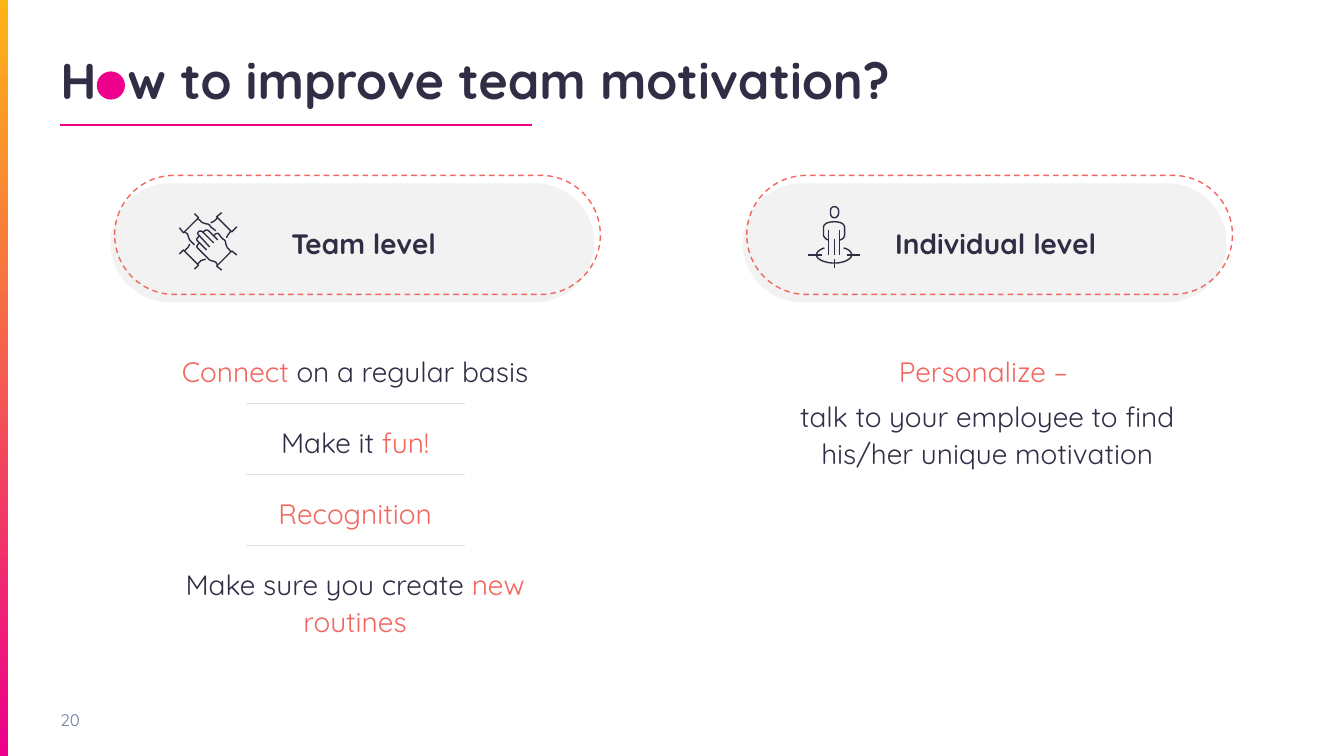
from lxml.etree import SubElement
from pptx import Presentation
from pptx.dml.color import RGBColor
from pptx.enum.dml import MSO_LINE
from pptx.enum.shapes import MSO_CONNECTOR, MSO_SHAPE
from pptx.enum.text import MSO_ANCHOR, PP_ALIGN
from pptx.oxml.ns import qn
from pptx.util import Cm, Pt

COLORS = {
    "ink": "302E45", "coral": "F2665F", "pink": "EC008C", "amber": "FDB515",
    "pill": "F2F2F2", "divider": "DFE1DF", "number": "6E7CA0", "white": "FFFFFF",
}
FONT = "Quicksand"

TITLE = [("H", "ink"), ("o", "white"), ("w to improve team motivation?", "ink")]
PAGE_NUMBER = "20"

# A two-number step is a straight segment; a six-number step is a cubic curve.
HANDS_ICON = [
    [(205, 248), (196, 239), (195, 238, 195, 237, 196, 236), (198, 234)],
    [(212, 241), (201, 230), (200, 229, 198, 229, 197, 230),
     (196, 231, 196, 232, 197, 233), (208, 245)],
    [(216, 263), (214, 260), (212, 259, 209, 259, 207, 257), (196, 246),
     (195, 245, 195, 244, 196, 243), (198, 241)],
    [(216, 238), (207, 229), (206, 228, 204, 228, 203, 229), (201, 231)],
    [(229, 250), (227, 247), (225, 246, 225, 244, 224, 242),
     (224, 239, 223, 238, 221, 237), (220, 236, 219, 235, 217, 232),
     (216, 231, 215, 232, 214, 232), (212, 234)],
    [(220, 268), (215, 264), (230, 249), (235, 253)],
    [(183, 230), (186, 232), (187, 234, 187, 237, 189, 239), (193, 243)],
    [(196, 217), (199, 219), (200, 221, 202, 221, 204, 222),
     (207, 222, 208, 223, 209, 225), (210, 226, 212, 227, 214, 229)],
    [(178, 226), (182, 231), (197, 216), (193, 212)],
    [(196, 262), (199, 259), (200, 258, 202, 258, 204, 257)],
    [(183, 249), (186, 246), (187, 245, 188, 243, 188, 242)],
    [(193, 267), (197, 263), (182, 248), (178, 252)],
    [(229, 229), (227, 232), (226, 233, 225, 235, 225, 236)],
    [(216, 216), (214, 218), (212, 220, 211, 220, 209, 221)],
    [(235, 225), (230, 230), (215, 215), (220, 211)],
]
PERSON_ICON = [
    [(833, 238), (836, 238, 838, 235, 838, 233), (838, 226),
     (838, 222, 834, 220, 828, 220), (821, 220, 817, 222, 817, 226),
     (817, 233), (817, 235, 820, 238, 822, 238)],
    [(828, 216), (830, 216, 832, 214, 832, 211), (832, 209),
     (832, 207, 830, 205, 828, 205), (825, 205, 824, 207, 824, 209),
     (824, 211), (824, 214, 825, 216, 828, 216)],
    [(833, 253), (833, 228)],
    [(822, 228), (822, 253)],
    [(828, 237), (828, 253)],
    [(837, 246), (842, 247, 845, 250, 845, 253), (845, 257, 837, 261, 828, 261),
     (818, 261, 810, 257, 810, 253), (810, 250, 814, 247, 818, 246)],
    [(802, 253), (816, 253)],
    [(840, 253), (853, 253)],
    [(828, 257), (828, 266)],
]
COLUMNS = [
    ("Team level", HANDS_ICON, [
        [[("Connect", "coral"), (" on a regular basis", "ink")]],
        [[("Make it ", "ink"), ("fun!", "coral")]],
        [[("Recognition", "coral")]],
        [[("Make sure you create ", "ink"), ("new routines", "coral")]],
    ]),
    ("Individual level", PERSON_ICON, [
        [[("Personalize – ", "coral")],
         [("talk to your employee to find his/her unique motivation", "ink")]],
    ]),
]
BODY = {"alignment": PP_ALIGN.CENTER, "line_spacing": 1.1, "space_before": Pt(6)}
LEFT, COLUMN_PITCH, ROW_PITCH = 1.52, 15.93, 1.79
PILL_LEFT, PILL_TOP, PILL_WIDTH, PILL_HEIGHT = 2.79, 4.62, 12.19, 3
ROW_LEFT, ROW_TOP, ROW_WIDTH, ROW_HEIGHT = 4.11, 8.84, 9.68, 0.86
DIVIDER_LEFT, DIVIDER_RIGHT, DIVIDER_DROP = 6.2, 11.71, 1.32
ICON_UNIT = 0.0254


def color(name):
    return RGBColor.from_string(COLORS[name])


def write(frame, paragraphs, size, bold=False, anchor=MSO_ANCHOR.TOP, inset=0, **layout):
    settings = {"word_wrap": True, "vertical_anchor": anchor, "margin_left": Cm(inset),
                "margin_right": 0, "margin_top": 0, "margin_bottom": 0}
    for name, value in settings.items():
        setattr(frame, name, value)
    for index, spans in enumerate(paragraphs):
        para = frame.add_paragraph() if index else frame.paragraphs[0]
        for name, value in layout.items():
            setattr(para, name, value)
        for text, tint in spans:
            span = para.add_run()
            span.text = text
            for name, value in {"name": FONT, "size": Pt(size), "bold": bold}.items():
                setattr(span.font, name, value)
            span.font.color.rgb = color(tint)


def add_box(left, top, width, height, paragraphs, size, **layout):
    box = page.shapes.add_textbox(Cm(left), Cm(top), Cm(width), Cm(height))
    write(box.text_frame, paragraphs, size, **layout)


def add_shape(kind, left, top, width, height, fill=None):
    shape = page.shapes.add_shape(kind, Cm(left), Cm(top), Cm(width), Cm(height))
    shape.shadow.inherit = False
    shape.line.fill.background()
    if fill:
        shape.fill.solid()
        shape.fill.fore_color.rgb = color(fill)
    else:
        shape.fill.background()
    return shape


def set_line(shape, tint, width):
    shape.line.color.rgb = color(tint)
    shape.line.width = Pt(width)


def add_line(start, end, tint, width):
    ends = [Cm(value) for value in (*start, *end)]
    line = page.shapes.add_connector(MSO_CONNECTOR.STRAIGHT, *ends)
    set_line(line, tint, width)
    SubElement(line._element.spPr, qn("a:effectLst"))


def curve_points(start, step, pieces=8):
    corners = [start, step[:2], step[2:4], step[4:]]
    for piece in range(1, pieces + 1):
        t = piece / pieces
        weights = ((1 - t) ** 3, 3 * t * (1 - t) ** 2, 3 * t * t * (1 - t), t ** 3)
        yield tuple(sum(w * c[axis] for w, c in zip(weights, corners)) for axis in (0, 1))


def add_stroke(steps):
    points = [steps[0]]
    for step in steps[1:]:
        points.extend([step] if len(step) == 2 else curve_points(points[-1], step))
    points = [(x * ICON_UNIT, y * ICON_UNIT) for x, y in points]
    if len(points) == 2:
        add_line(*points, "ink", 1)
        return
    points = [(x * 1000, y * 1000) for x, y in points]
    builder = page.shapes.build_freeform(*points[0], scale=Cm(0.001))
    builder.add_line_segments(points[1:], close=points[0] == points[-1])
    stroke = builder.convert_to_shape()
    stroke.shadow.inherit = False
    stroke.fill.background()
    set_line(stroke, "ink", 1)


def add_column(left, heading, icon, rows):
    pill = add_shape(MSO_SHAPE.ROUNDED_RECTANGLE, PILL_LEFT + left, PILL_TOP,
                     PILL_WIDTH, PILL_HEIGHT, "pill")
    write(pill.text_frame, [[(heading, "ink")]], 20, bold=True,
          anchor=MSO_ANCHOR.MIDDLE, inset=0.56, alignment=PP_ALIGN.CENTER)
    outline = add_shape(MSO_SHAPE.ROUNDED_RECTANGLE, PILL_LEFT + left + 0.1,
                        PILL_TOP - 0.2, PILL_WIDTH + 0.05, PILL_HEIGHT)
    set_line(outline, "coral", 1)
    outline.line.dash_style = MSO_LINE.DASH
    for shape in (pill, outline):
        shape.adjustments[0] = 0.5
    for steps in icon:
        add_stroke(steps)
    for index, paragraphs in enumerate(rows):
        top = ROW_TOP + index * ROW_PITCH
        add_box(ROW_LEFT + left, top, ROW_WIDTH, ROW_HEIGHT, paragraphs, 20, **BODY)
        if index < len(rows) - 1:
            y = top + DIVIDER_DROP
            add_line((DIVIDER_LEFT + left, y), (DIVIDER_RIGHT + left, y), "divider", 0.75)


deck = Presentation()
deck.slide_width, deck.slide_height = Cm(33.87), Cm(19.05)
page = deck.slides.add_slide(deck.slide_layouts[5])

bar = add_shape(MSO_SHAPE.RECTANGLE, 0, 0, 0.2, 19.05)
bar.fill.gradient()
bar.fill.gradient_angle = 270
for stop, tint in zip(bar.fill.gradient_stops, ("amber", "pink")):
    stop.color.rgb = color(tint)

title = page.shapes.title
for name, value in {"left": LEFT, "top": 1.24, "width": 30.81, "height": 1.55}.items():
    setattr(title, name, Cm(value))
write(title.text_frame, [TITLE], 36, bold=True, alignment=PP_ALIGN.LEFT)
add_line((LEFT, 3.15), (13.41, 3.15), "pink", 1.5)
add_shape(MSO_SHAPE.OVAL, 2.44, 1.8, 0.71, 0.71, "pink")

for index, column in enumerate(COLUMNS):
    add_column(index * COLUMN_PITCH, *column)
add_box(LEFT, 17.63, 1.75, 1.02, [[(PAGE_NUMBER, "number")]], 12, anchor=MSO_ANCHOR.MIDDLE)

deck.save("out.pptx")
